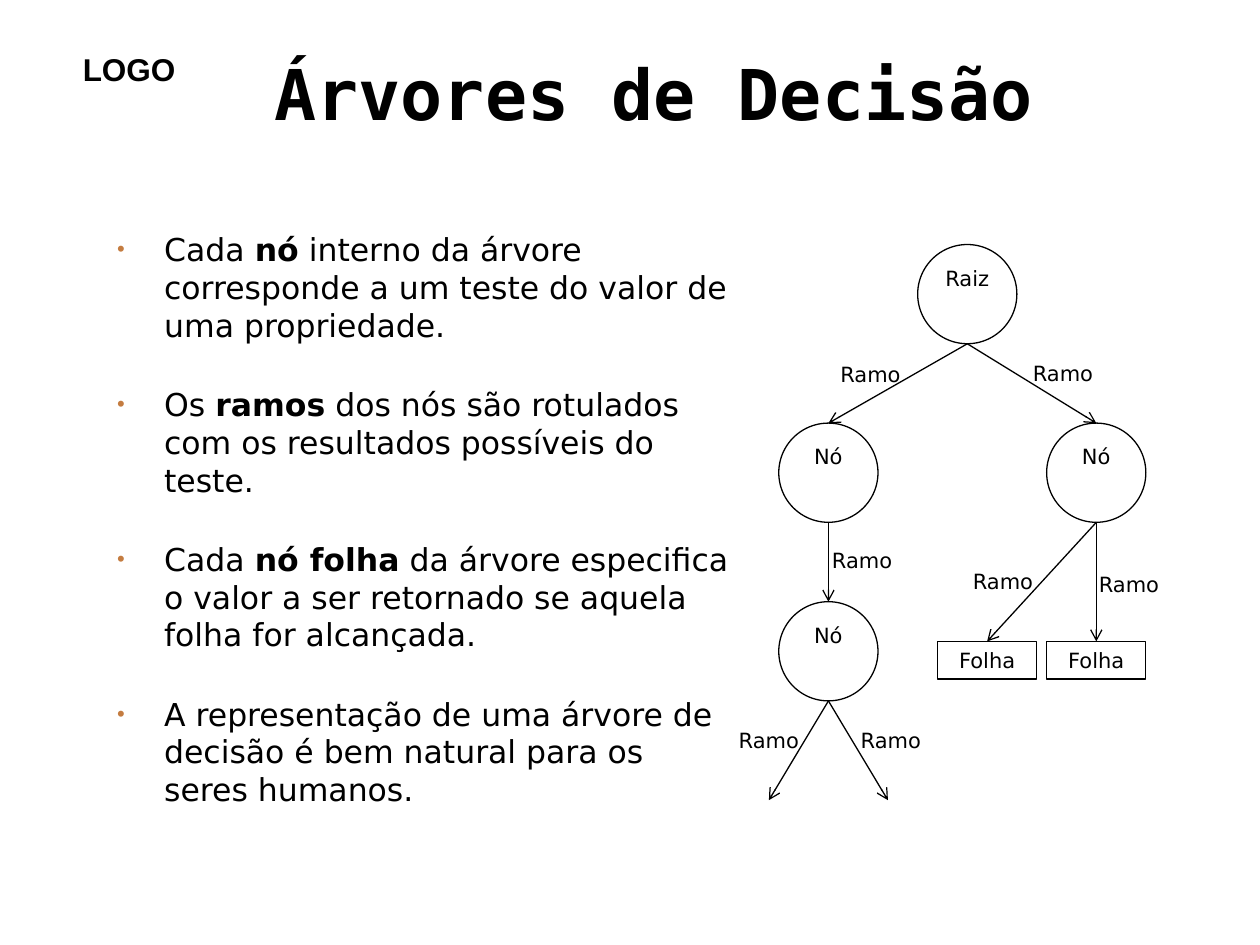
import pptx
import pptx.util
import pptx.dml.color
import pptx.enum.shapes
import pptx.enum.text
import pptx.oxml
import pptx.oxml.ns
from lxml import etree

Cm = pptx.util.Cm
Pt = pptx.util.Pt
Kind = pptx.enum.shapes.MSO_SHAPE
Align = pptx.enum.text.PP_ALIGN
Anchor = pptx.enum.text.MSO_ANCHOR
qn = pptx.oxml.ns.qn

HEX = {"ink": "000000", "dot": "C47C40"}
SANS = "DejaVu Sans"
TITLE = "Árvores de Decisão"
POINTS = [
    [("Cada ", False), ("nó", True),
     (" interno da árvore corresponde a um teste do valor de uma propriedade.", False)],
    [("Os ", False), ("ramos", True),
     (" dos nós são rotulados com os resultados possíveis do teste.", False)],
    [("Cada ", False), ("nó folha", True),
     (" da árvore especifica o valor a ser retornado se aquela folha for alcançada.", False)],
    [("A representação de uma árvore de decisão é bem natural para os seres humanos.", False)],
]

SIZE = 2
ROW = 0.76
TOP = 4.93
STEP = 3.6
LEAF = 12.93
END = 16.13
NODES = {
    "root": ("Raiz", 19.5, TOP),
    "left": ("Nó", 16.7, TOP + STEP),
    "right": ("Nó", 22.1, TOP + STEP),
    "low": ("Nó", 16.7, TOP + 2 * STEP),
}
LEAVES = {"leaf_a": ("Folha", 19.9, LEAF), "leaf_b": ("Folha", 22.1, LEAF)}
ENDS = {"end_a": ("", 15.5, END), "end_b": ("", 17.9, END)}
EDGES = [
    ("root", "left", 17.55, 7.16),
    ("root", "right", 21.43, 7.14),
    ("left", "low", 17.38, 10.92),
    ("right", "leaf_a", 20.22, 11.33),
    ("right", "leaf_b", 22.76, 11.4),
    ("low", "end_a", 15.5, 14.55),
    ("low", "end_b", 17.96, 14.55),
]


def color(name):
    return pptx.dml.color.RGBColor.from_string(HEX[name])


def write(para, text, size, bold=False, face=SANS):
    run = para.add_run()
    run.text = text
    font = run.font
    font.name = face
    font.size = Pt(size)
    font.bold = bold
    font.color.rgb = color("ink")


def add_box(slide, x, y, w, h, wrap=True):
    box = slide.shapes.add_textbox(Cm(x), Cm(y), Cm(w), Cm(h))
    box.text_frame.word_wrap = wrap
    return box.text_frame


def add_dot(para):
    props = para._p.get_or_add_pPr()
    props.set("marL", str(Cm(0.95)))
    props.set("indent", str(-Cm(0.95)))
    tint = etree.SubElement(props, qn("a:buClr"))
    etree.SubElement(tint, qn("a:srgbClr"), val=HEX["dot"])
    etree.SubElement(props, qn("a:buSzPct"), val="70000")
    etree.SubElement(props, qn("a:buFont"), typeface="Arial")
    etree.SubElement(props, qn("a:buChar"), char="•")


def add_node(slide, kind, text, mid, top, high):
    node = slide.shapes.add_shape(
        kind, Cm(mid - SIZE / 2), Cm(top), Cm(SIZE), Cm(high))
    node.shadow.inherit = False
    node.fill.background()
    node.line.color.rgb = color("ink")
    node.line.width = Pt(0.75)
    frame = node.text_frame
    frame.vertical_anchor = Anchor.TOP
    para = frame.paragraphs[0]
    para.alignment = Align.CENTER
    write(para, text, 12)


def add_arrow(slide, start, end):
    line = slide.shapes.add_connector(
        pptx.enum.shapes.MSO_CONNECTOR.STRAIGHT, *map(Cm, start + end))
    line.line.color.rgb = color("ink")
    line.line.width = Pt(0.75)
    etree.SubElement(line.line._get_or_add_ln(), qn("a:tailEnd"), type="arrow")
    etree.SubElement(line._element.spPr, qn("a:effectLst"))


def add_tree(slide):
    for text, mid, top in NODES.values():
        add_node(slide, Kind.OVAL, text, mid, top, SIZE)
    for text, mid, top in LEAVES.values():
        add_node(slide, Kind.RECTANGLE, text, mid, top, ROW)
    spots = {**NODES, **LEAVES, **ENDS}
    for above, below, mid, top in EDGES:
        start, end = spots[above][1:], spots[below][1:]
        add_arrow(slide, (start[0], start[1] + SIZE), end)
        para = add_box(slide, mid - 0.86, top, 1.72, ROW, False).paragraphs[0]
        para.alignment = Align.CENTER
        write(para, "Ramo", 12)


def main():
    deck = pptx.Presentation()
    deck.slide_width, deck.slide_height = Cm(25.4), Cm(19.05)
    slide = deck.slides.add_slide(deck.slide_layouts[5])

    title = slide.shapes.title
    title.left, title.top = Cm(5.28), Cm(0.64)
    title.width, title.height = Cm(18.85), Cm(2.46)
    title.text_frame.vertical_anchor = Anchor.MIDDLE
    head = title.text_frame.paragraphs[0]
    head.alignment = Align.LEFT
    write(head, TITLE, 40, True, "DejaVu Sans Mono")

    logo = add_box(slide, 1.42, 0.89, 2.39, 1.02, False)
    write(logo.paragraphs[0], "LOGO", 18, True, "Arial")

    body = add_box(slide, 2.11, 4.52, 13, 11.4)
    for i, point in enumerate(POINTS):
        para = body.add_paragraph() if i else body.paragraphs[0]
        add_dot(para)
        if i:
            para.space_before = Pt(23.6)
        for text, bold in point:
            write(para, text, 18, bold)

    add_tree(slide)
    deck.save("out.pptx")


if __name__ == "__main__":
    main()
